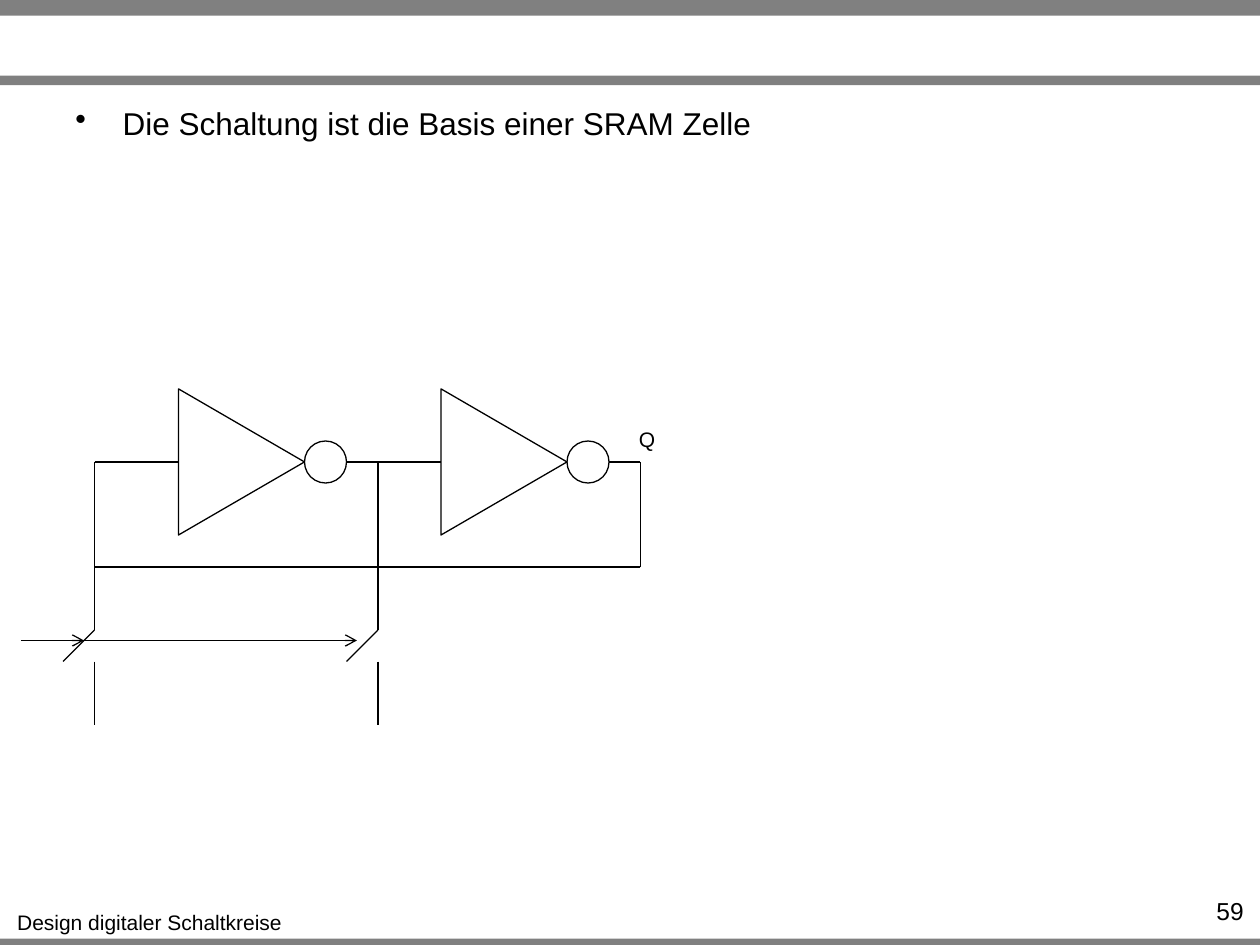
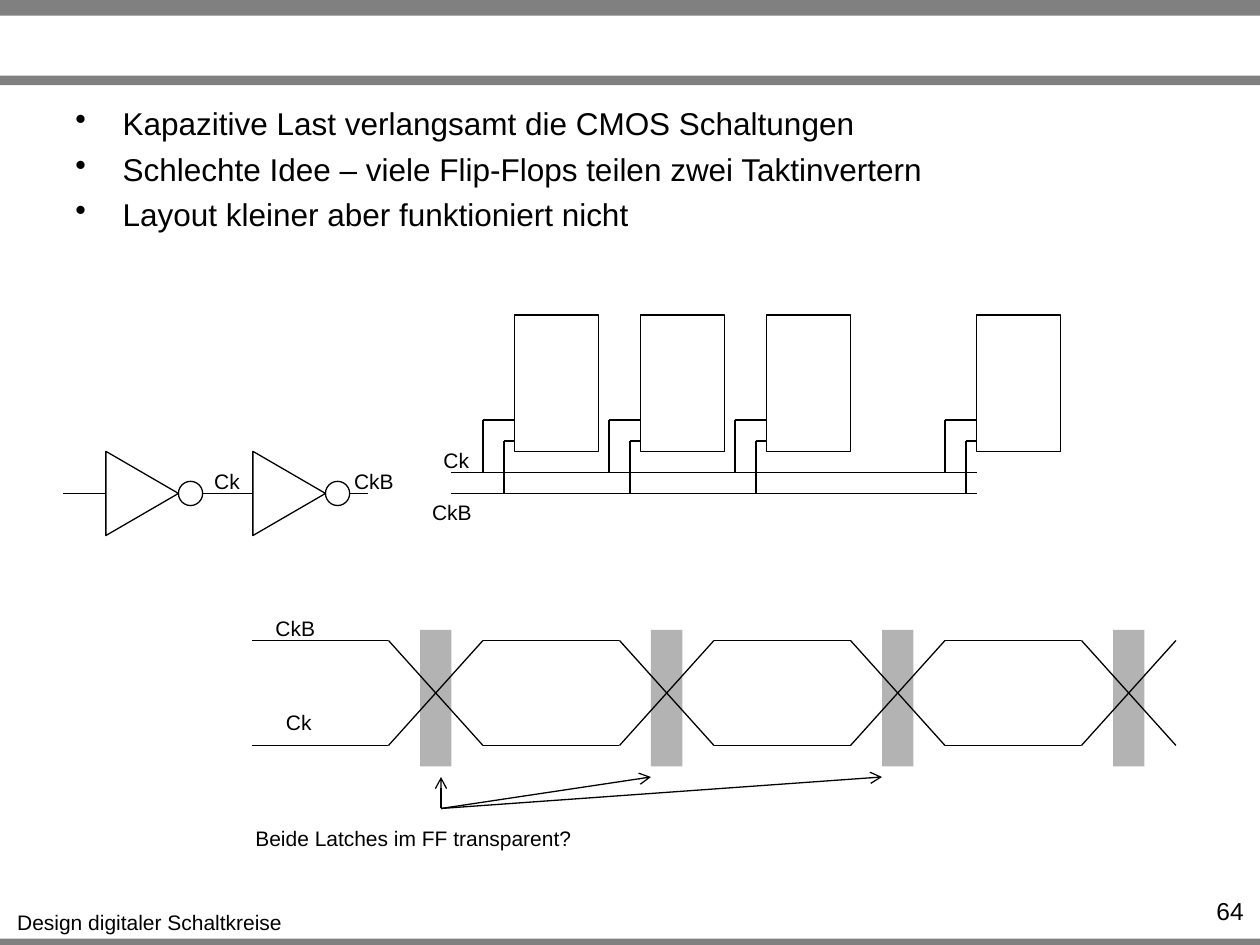
from itertools import pairwise

from lxml.etree import SubElement
from pptx import Presentation
from pptx.dml.color import RGBColor
from pptx.enum.shapes import MSO_CONNECTOR, MSO_SHAPE
from pptx.enum.text import PP_ALIGN
from pptx.oxml.ns import qn
from pptx.util import Pt

FONT = "Arial"
BLACK, WHITE, GREY, PALE = "000000", "FFFFFF", "808080", "B3B3B3"
LINE = 0.75
BANDS = [(0, 9), (43.2, 5.4), (536.4, 3.6)]  # top, height
FOOTER = "Design digitaler Schaltkreise"


def paint(target, color):
    """Give a fill, line or font a solid colour."""
    target.rgb = RGBColor.from_string(color)


# Basic elements
def shape(slide, kind, x, y, w, h, fill=None, line=None):
    item = slide.shapes.add_shape(kind, Pt(x), Pt(y), Pt(w), Pt(h))
    item.shadow.inherit = False
    if fill:
        item.fill.solid()
        paint(item.fill.fore_color, fill)
    else:
        item.fill.background()
    if line:
        item.line.width = Pt(LINE)
        paint(item.line.color, line)
    else:
        item.line.fill.background()
    return item


def wire(slide, start, end, arrow=False):
    x1, y1, x2, y2 = (Pt(v) for v in (*start, *end))
    item = slide.shapes.add_connector(MSO_CONNECTOR.STRAIGHT, x1, y1, x2, y2)
    item.line.width = Pt(LINE)
    paint(item.line.color, BLACK)
    if arrow:
        SubElement(item.line._get_or_add_ln(), qn("a:tailEnd"), type="arrow")
    SubElement(item._element.spPr, qn("a:effectLst"))


def chain(slide, *points):
    for start, end in pairwise(points):
        wire(slide, start, end)


def label(slide, text, x, y, w, h=21.6, size=12, align=PP_ALIGN.CENTER, wrap=False):
    frame = slide.shapes.add_textbox(Pt(x), Pt(y), Pt(w), Pt(h)).text_frame
    frame.word_wrap = wrap
    frame.text = text
    for para in frame.paragraphs:
        para.alignment = align
        for run in para.runs:
            run.font.name = FONT
            run.font.size = Pt(size)
            paint(run.font.color, BLACK)
    return frame


def bullets(slide, lines):
    frame = label(slide, "\n".join(lines), 36, 56, 648, 53, 18, PP_ALIGN.LEFT, True)
    for num, para in enumerate(frame.paragraphs):
        props = para._p.get_or_add_pPr()
        props.set("marL", str(Pt(27)))
        props.set("indent", str(-Pt(27)))
        SubElement(props, qn("a:buChar"), char="•")
        if num:
            para.space_before = Pt(4.4)


# Circuit parts
def gate(slide, x, y, size, lead):
    """Inverter: x is the triangle's left edge, y its axis."""
    tip, dot, tall = x + size, size / 3, size * 1.16
    wire(slide, (tip, y), (tip + size * 7 / 12, y))
    shape(slide, MSO_SHAPE.OVAL, tip, y - dot / 2, dot, dot, WHITE, BLACK)
    body = shape(slide, MSO_SHAPE.ISOSCELES_TRIANGLE, x + (size - tall) / 2,
                 y - size / 2, tall, size, line=BLACK)
    body.rotation = 90
    wire(slide, (x - lead, y), (x, y))


def switch(slide, x, top):
    """Wire down to an open switch, then the line below it."""
    chain(slide, (x, top), (x, 360), (x - 18, 378))
    wire(slide, (x, 378), (x, 414))


def latch(slide, x):
    shape(slide, MSO_SHAPE.RECTANGLE, x, 180, 48, 78, line=BLACK)
    chain(slide, (x - 18, 270), (x - 18, 240), (x, 240))
    chain(slide, (x - 6, 282), (x - 6, 252), (x, 252))


def clocks(slide):
    """Two opposite clocks with grey bars at their crossings."""
    starts = [144 + 132 * i for i in range(4)]
    for x in starts:
        shape(slide, MSO_SHAPE.RECTANGLE, x + 96, 360, 18, 78, PALE)
    for level, other in ((366, 426), (426, 366)):
        for x in starts:
            chain(slide, (x, level), (x + 78, level), (x + 132, other))
            level, other = other, level


# Slides
def base(deck, page, lines):
    slide = deck.slides.add_slide(deck.slide_layouts[6])
    for top, tall in BANDS:
        shape(slide, MSO_SHAPE.RECTANGLE, 0, top, 720, tall, GREY)
    label(slide, FOOTER, 2, 516.2, 167)
    label(slide, page, 655.2, 508.3, 62.6, 17.3, 14, PP_ALIGN.RIGHT, True)
    bullets(slide, lines)
    return slide


def sram(deck):
    slide = base(deck, "59", ["Die Schaltung ist die Basis einer SRAM Zelle"])
    gate(slide, 102, 264, 72, 48)
    gate(slide, 252, 264, 72, 54)
    label(slide, "Q", 357.8, 240, 23.8)
    # Feedback and access switches
    chain(slide, (366, 264), (366, 324), (54, 324))
    for x in (54, 216):
        switch(slide, x, 264)
    wire(slide, (12, 366), (204, 366), True)
    wire(slide, (24, 366), (48, 366), True)


def clock(deck):
    slide = base(deck, "64", [
        "Kapazitive Last verlangsamt die CMOS Schaltungen",
        "Schlechte Idee – viele Flip-Flops teilen zwei Taktinvertern",
        "Layout kleiner aber funktioniert nicht",
    ])
    # Clock inverters
    for x in (60.5, 144.5):
        gate(slide, x, 282, 41.5, 24.5)
    # Latches on the shared clock lines
    for x in (294, 366, 438, 558):
        latch(slide, x)
    for y in (270, 282):
        wire(slide, (258, y), (558, y))
    # Timing and the moments of doubt
    clocks(slide)
    for end in ((372, 444), (504, 444), (252, 444)):
        wire(slide, (252, 462), end, True)
    for x, y in ((115, 264), (246, 252), (156, 402)):
        label(slide, "Ck", x, y, 29.5)
    for x, y in ((195, 264), (239.5, 282), (150, 348)):
        label(slide, "CkB", x, y, 37.4)
    label(slide, "Beide Latches im FF transparent?", 138, 468, 196.6)


def main():
    deck = Presentation()
    deck.slide_width, deck.slide_height = Pt(720), Pt(540)
    sram(deck)
    clock(deck)
    deck.save("out.pptx")


if __name__ == "__main__":
    main()
